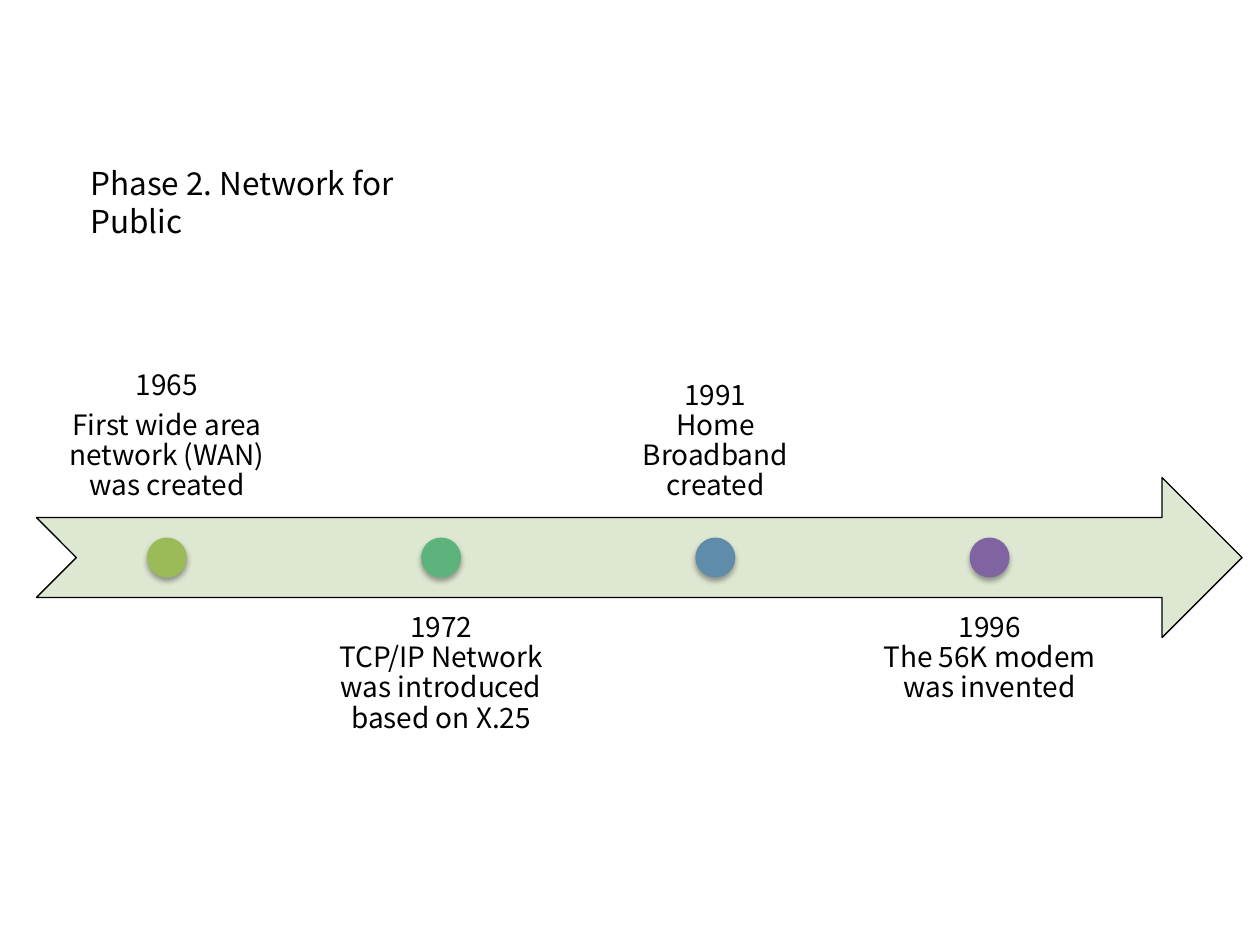
import lxml.etree
import pptx
import pptx.dml.color
import pptx.enum.shapes
import pptx.enum.text
import pptx.oxml
import pptx.oxml.ns
import pptx.util
from dataclasses import dataclass

Pt = pptx.util.Pt
RGB = pptx.dml.color.RGBColor.from_string
Shape = pptx.enum.shapes.MSO_SHAPE
Align = pptx.enum.text.PP_ALIGN
Anchor = pptx.enum.text.MSO_ANCHOR


@dataclass(frozen=True)
class Theme:
    font: str = "Noto Sans CJK KR"
    text: str = "000000"
    band: str = "DEE7D1"
    dots: tuple = ("9BBB59", "5CB37C", "608CAB", "8064A2")
    title_size: int = 18
    label_size: int = 16


class Timeline:
    """Draws timeline elements on one slide in a shared theme."""

    def __init__(self, slide, theme):
        self.slide, self.theme = slide, theme

    def shape(self, kind, x, y, w, h, fill):
        sp = self.slide.shapes.add_shape(kind, Pt(x), Pt(y), Pt(w), Pt(h))
        sp.shadow.inherit = False
        sp.fill.solid()
        sp.fill.fore_color.rgb = RGB(fill)
        return sp

    def arrow(self, x, y, w, h):
        sp = self.shape(Shape.NOTCHED_RIGHT_ARROW, x, y, w, h, self.theme.band)
        sp.line.color.rgb = RGB(self.theme.text)
        sp.line.width = Pt(0.75)

    def dot(self, cx, cy, d, fill):
        sp = self.shape(Shape.OVAL, cx - d / 2, cy - d / 2, d, d, fill)
        sp.line.fill.background()
        effects = sp._element.spPr.find(pptx.oxml.ns.qn("a:effectLst"))
        effects.append(pptx.oxml.parse_xml(
            f'<a:outerShdw {pptx.oxml.ns.nsdecls("a")} blurRad="{Pt(3.1)}" '
            f'dist="{Pt(1.8)}" dir="5400000" rotWithShape="0">'
            f'<a:srgbClr val="{self.theme.text}"><a:alpha val="35000"/></a:srgbClr>'
            '</a:outerShdw>'))

    def text(self, x, y, w, h, paragraphs, size):
        tf = self.slide.shapes.add_textbox(Pt(x), Pt(y), Pt(w), Pt(h)).text_frame
        tf.word_wrap = True
        tf.text = "\n".join(paragraphs)
        for p in tf.paragraphs:
            p.font.name = self.theme.font
            p.font.size = Pt(size)
            p.font.color.rgb = RGB(self.theme.text)
        return tf

    def title(self, x, y, w, h, text):
        tf = self.text(x, y, w, h, [text], self.theme.title_size)
        tf.auto_size = pptx.enum.text.MSO_AUTO_SIZE.SHAPE_TO_FIT_TEXT

    def label(self, x, y, w, h, paragraphs, anchor):
        size = self.theme.label_size
        tf = self.text(x, y, w, h, paragraphs, size)
        tf.vertical_anchor = anchor
        tf.margin_left = tf.margin_right = tf.margin_top = tf.margin_bottom = Pt(8.96)
        for p in tf.paragraphs:
            p.alignment = Align.CENTER
            p.line_spacing = 0.9
            p.space_after = Pt(0.35 * size)


def main():
    prs = pptx.Presentation()
    prs.slide_width, prs.slide_height = Pt(720), Pt(540)
    theme = Theme()
    s = Timeline(prs.slides.add_slide(prs.slide_layouts[6]), theme)

    left, top, height = 20.8, 272.9, 91.44
    label_w, step, dot_d = 149.2, 156.7, 22.86
    events = [
        ["1965", "First wide area network (WAN) was created"],
        ["1972\vTCP/IP Network was introduced based on X.25"],
        ["1991\vHome Broadband created"],
        ["1996\vThe 56K modem was invented"],
    ]

    s.arrow(left, top, 689, height)
    for i, (paragraphs, color) in enumerate(zip(events, theme.dots)):
        x = left + i * step
        y, anchor = ((top + 0.75 * height, Anchor.TOP) if i % 2
                     else (top - 0.75 * height, Anchor.BOTTOM))
        s.label(x, y, label_w, height, paragraphs, anchor)
        s.dot(x + label_w / 2, top + height / 2, dot_d, color)
    s.title(44.6, 90, 206.6, 51, "Phase 2. Network for Public")

    prs.save("out.pptx")


if __name__ == "__main__":
    main()
